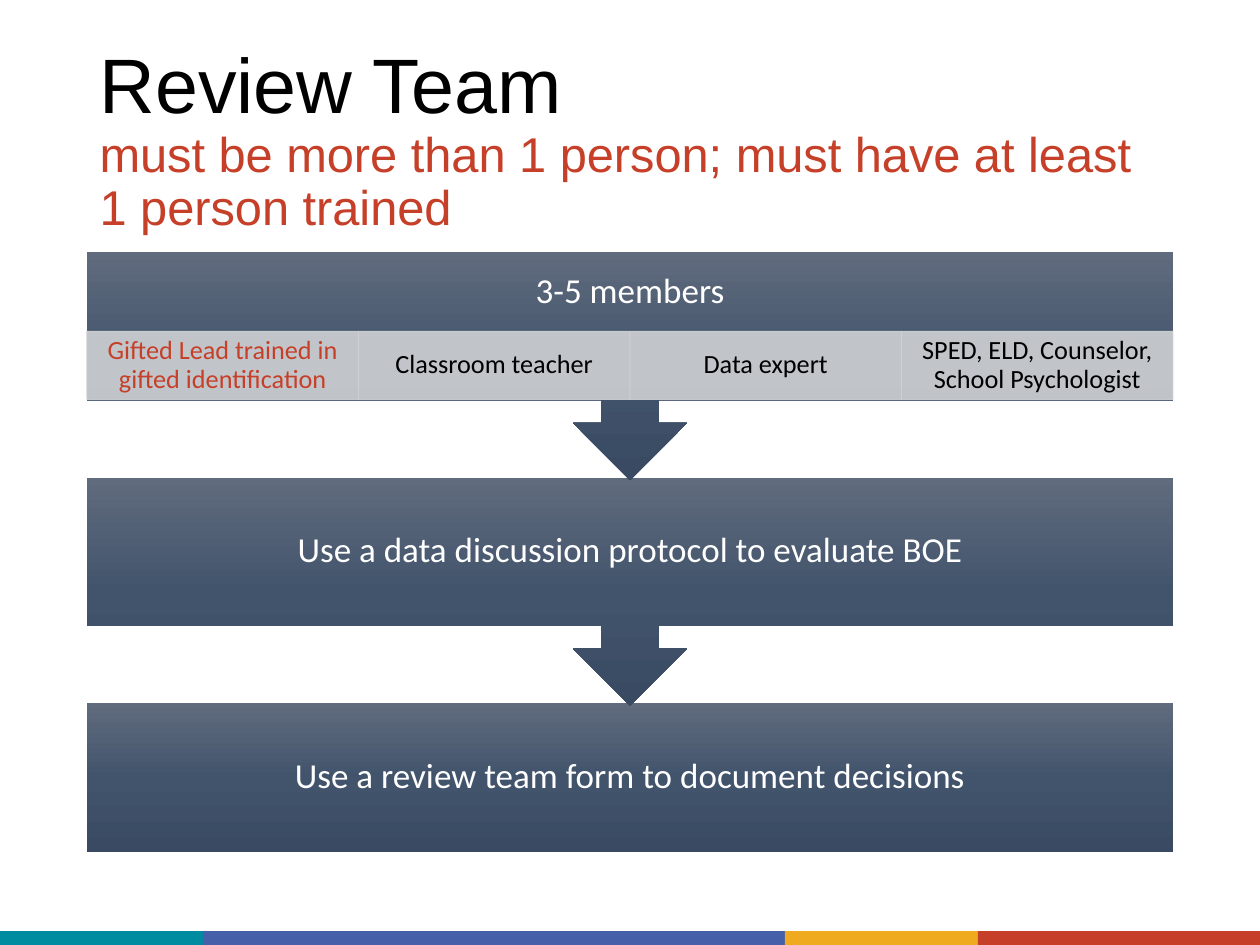
from copy import deepcopy

from lxml.etree import SubElement
from pptx import Presentation
from pptx.dml.color import RGBColor
from pptx.enum.shapes import MSO_SHAPE
from pptx.enum.text import MSO_ANCHOR, MSO_AUTO_SIZE, PP_ALIGN
from pptx.oxml.ns import qn
from pptx.util import Inches, Pt

RED = "C63F28"
BLACK = "000000"
WHITE = "FFFFFF"
CELL_FILL = "CFD1D4"
GRADIENT = [(0, "606B7D"), (0.5, "42546C"), (1, "394A62")]
STRIPES = [(0, 1.61, "008CA0"), (1.61, 4.62, "455FA9"),
           (6.23, 1.53, "EFAA1F"), (7.76, 2.24, RED)]
MEMBERS = [("Gifted Lead trained in gifted identification", RED),
           ("Classroom teacher", BLACK),
           ("Data expert", BLACK),
           ("SPED, ELD, Counselor, School Psychologist", BLACK)]
STEPS = ["3-5 members",
         "Use a data discussion protocol to evaluate BOE",
         "Use a review team form to document decisions"]


def rgb(value):
    """Return the colour for a hex string."""
    return RGBColor.from_string(value)


def add_block(slide, kind, box):
    """Add a preset shape without shadow or line; box is in inches."""
    sp = slide.shapes.add_shape(kind, *map(Inches, box))
    sp.shadow.inherit = False
    sp.line.fill.background()
    return sp


def fill_solid(fill, color, alpha=None):
    """Fill with one colour, at an optional opacity in percent."""
    fill.solid()
    fill.fore_color.rgb = rgb(color)
    if alpha is not None:
        clr = next(fill._xPr.iter(qn("a:srgbClr")))
        SubElement(clr, qn("a:alpha")).set("val", str(alpha * 1000))


def fill_gradient(fill):
    """Fill with the three-stop gradient, from top to bottom."""
    fill.gradient()
    fill.gradient_angle = 270
    stops = next(fill._xPr.iter(qn("a:gsLst")))
    stops.append(deepcopy(stops[0]))
    for stop, (position, color) in zip(fill.gradient_stops, GRADIENT):
        stop.position = position
        stop.color.rgb = rgb(color)


def set_text(sp, text, size, color, insets):
    """Write centred text; insets are left, top, right, bottom in inches."""
    tf = sp.text_frame
    tf.word_wrap = True
    tf.vertical_anchor = MSO_ANCHOR.MIDDLE
    (tf.margin_left, tf.margin_top,
     tf.margin_right, tf.margin_bottom) = map(Inches, insets)
    p = tf.paragraphs[0]
    p.text = text
    p.alignment = PP_ALIGN.CENTER
    p.line_spacing = 0.9
    p.font.name = "Calibri"
    p.font.size = Pt(size)
    p.font.color.rgb = rgb(color)


def add_title(slide, box):
    """Place the title and its red second line."""
    title = slide.shapes.title
    title.left, title.top, title.width, title.height = map(Inches, box)
    tf = title.text_frame
    tf.word_wrap = True
    tf.auto_size = MSO_AUTO_SIZE.NONE
    tf.vertical_anchor = MSO_ANCHOR.MIDDLE
    p = tf.paragraphs[0]
    p.alignment = PP_ALIGN.LEFT
    p.line_spacing = 0.9
    p.font.name = "Arial"
    r = p.add_run()
    r.text = "Review Team"
    r.font.size = Pt(44.1)
    r.font.color.rgb = rgb(BLACK)
    p.add_line_break()
    r = p.add_run()
    r.text = "must be more than 1 person; must have at least 1 person trained"
    r.font.size = Pt(27.9)
    r.font.color.rgb = rgb(RED)


def add_members(slide, box):
    """Divide the box into equal cells, one for each team member."""
    left, top, width, height = box
    cell_width = width / len(MEMBERS)
    for i, (text, color) in enumerate(MEMBERS):
        cell = add_block(slide, MSO_SHAPE.RECTANGLE,
                         (left + i * cell_width, top, cell_width, height))
        fill_solid(cell.fill, CELL_FILL, 90)
        fill_solid(cell.line.fill, CELL_FILL, 90)
        cell.line.width = Pt(0.5)
        set_text(cell, text, 15, color, (0.12, 0.02, 0.12, 0.02))


def add_process(slide, box):
    """Stack the steps in the box, last one first, then the members."""
    left, top, width, height = box
    body, callout, inset, members = 1.18, 1.81, 0.16, 0.54
    pitch = (height - body) / (len(STEPS) - 1)
    for i, text in reversed(list(enumerate(STEPS))):
        last = i == len(STEPS) - 1
        kind = MSO_SHAPE.RECTANGLE if last else MSO_SHAPE.DOWN_ARROW_CALLOUT
        step = add_block(slide, kind, (left, top + i * pitch, width,
                                       body if last else callout))
        fill_gradient(step.fill)
        bottom = inset if i else inset + members
        set_text(step, text, 20, WHITE, (inset, inset, inset, bottom))
    add_members(slide, (left, top + 0.63, width, members))


def add_stripes(slide, top, height):
    """Draw the coloured band along the foot of the slide."""
    for left, width, color in STRIPES:
        stripe = add_block(slide, MSO_SHAPE.RECTANGLE,
                           (left, top, width, height))
        fill_solid(stripe.fill, color)


def main():
    """Build and save the slide."""
    prs = Presentation()
    prs.slide_width, prs.slide_height = Inches(10), Inches(7.5)
    slide = prs.slides.add_slide(prs.slide_layouts[5])
    add_stripes(slide, 7.39, 0.11)
    add_title(slide, (0.69, 0.4, 8.62, 1.45))
    add_process(slide, (0.69, 2, 8.62, 4.76))
    prs.save("out.pptx")


if __name__ == "__main__":
    main()
